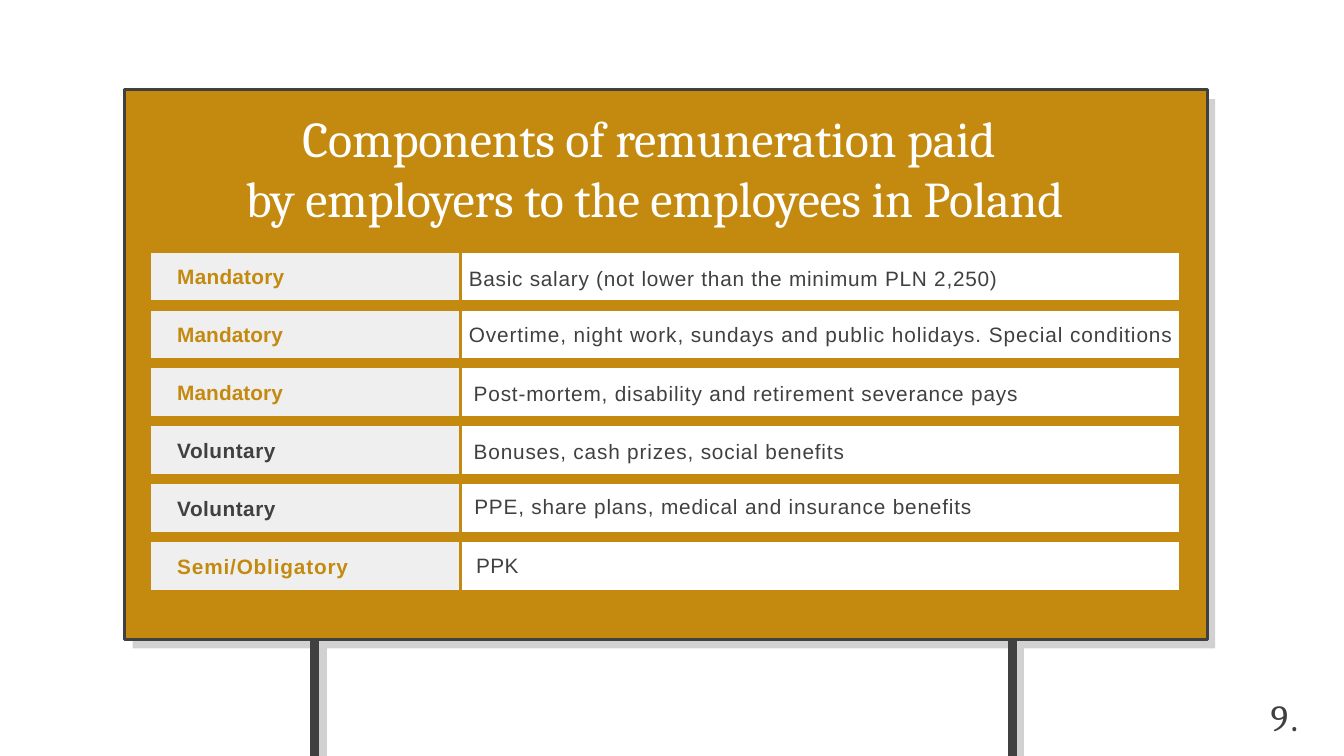
from pptx import Presentation
from pptx.dml.color import RGBColor
from pptx.enum.shapes import MSO_SHAPE
from pptx.enum.text import MSO_AUTO_SIZE, PP_ALIGN
from pptx.util import Inches, Pt

RECT = MSO_SHAPE.RECTANGLE
GROW = MSO_AUTO_SIZE.SHAPE_TO_FIT_TEXT
LEFT, CENTER = PP_ALIGN.LEFT, PP_ALIGN.CENTER
WIDE, HIGH = Inches(21.99), Inches(12.37)
GOLD, DARK, SHADE = "C48A10", "404041", "D1D1D1"
WHITE, PALE = "FFFFFF", "EFEFEF"

ROW_TOP, ROW_STEP, ROW_HIGH = 33.23, 7.66, 6.67
LABEL_X, LABEL_W = 11.1, 23.15
CELL_X, CELL_W = 34.06, 53.8
TEXT_HIGH = 3.56

ROWS = [
    ("Mandatory", GOLD, 0.3, "Basic salary (not lower than the minimum PLN 2,250)",
     0.9, 32.42, 1.78, 53.8),
    ("Mandatory", GOLD, 0.1, "Overtime, night work, sundays and public holidays. Special conditions",
     1.1, 32.42, 1.54, 55.57),
    ("Mandatory", GOLD, 0.1, "Post-mortem, disability and retirement severance pays",
     1, 32.79, 1.7, 53.8),
    ("Voluntary", DARK, 0.6, "Bonuses, cash prizes, social benefits",
     1, 32.79, 1.7, 53.8),
    ("Voluntary", DARK, 0.6, "PPE, share plans, medical and insurance benefits",
     1, 32.83, 1.21, 53.8),
    ("Semi/Obligatory", GOLD, 1, "PPK",
     0.5, 32.97, 1.46, 53.8),
]


def color(code):
    return RGBColor.from_string(code)


def across(share):
    return round(WIDE * share / 100)


def down(share):
    return round(HIGH * share / 100)


def place(x, y, w, h):
    return across(x), down(y), across(w), down(h)


def outline(shape, code, width):
    shape.line.color.rgb = color(code)
    shape.line.width = Pt(width)


def add_box(slide, x, y, w, h, fill, edge=None, width=0):
    box = slide.shapes.add_shape(RECT, *place(x, y, w, h))
    box.shadow.inherit = False
    box.fill.solid()
    box.fill.fore_color.rgb = color(fill)
    if edge:
        outline(box, edge, width)
    else:
        box.line.fill.background()


def add_legs(slide, x, code):
    left, right = across(x), across(x + 51.9)
    top, foot = down(82.62), HIGH
    path = slide.shapes.build_freeform(left, foot)
    path.add_line_segments([(left, top), (right, top), (right, foot)], close=False)
    legs = path.convert_to_shape()
    legs.shadow.inherit = False
    legs.fill.background()
    outline(legs, code, 10.72)


def add_text(slide, x, y, w, h, indent, before=1.2, align=LEFT):
    frame = slide.shapes.add_textbox(*place(x, y, w, h)).text_frame
    frame.word_wrap = True
    frame.auto_size = GROW
    frame.margin_left = across(indent)
    frame.margin_right = frame.margin_bottom = 0
    frame.margin_top = Inches(0.02)
    para = frame.paragraphs[0]
    para.alignment = align
    para.space_before = Pt(before)
    return para


def add_run(para, text, size, face, code, gap, bold=False):
    run = para.add_run()
    run.text = text
    run.font.size = Pt(size)
    run.font.name = face
    run.font.bold = bold
    run.font.color.rgb = color(code)
    run._r.get_or_add_rPr().set("spc", str(round(gap * 100)))


def add_board(slide):
    add_legs(slide, 23.97, SHADE)
    add_box(slide, 9.87, 13.1, 80.54, 72.68, SHADE)
    add_legs(slide, 23.42, DARK)
    add_box(slide, 9.28, 11.88, 80.54, 72.68, GOLD, DARK, 3.3)


def add_title(slide):
    para = add_text(slide, 7.91, 14.07, 72.4, 16.17, 9.19, 1.4, CENTER)
    add_run(para, "Components of remuneration paid ", 59, "Cambria", WHITE, -0.3)
    para.add_line_break()
    add_run(para, "by employers to the employees in Poland", 59, "Cambria", WHITE, -0.3)


def add_row(slide, top, row):
    label, code, gap, detail, space, x, drop, w = row
    add_box(slide, CELL_X, top, CELL_W, ROW_HIGH, WHITE, GOLD, 3.5)
    add_box(slide, LABEL_X, top, LABEL_W, ROW_HIGH, PALE, GOLD, 3.5)
    para = add_text(slide, LABEL_X, top + 1.54, LABEL_W, TEXT_HIGH, 2.09)
    add_run(para, label, 24.5, "Arial", code, gap, True)
    para = add_text(slide, x, top + drop, w, TEXT_HIGH, 2.46)
    add_run(para, detail, 24.5, "Arial", DARK, space)


def add_page(slide):
    para = add_text(slide, 94.41, 92.08, 4.05, 5.66, 0.14, 0)
    para.line_spacing = Pt(48.4)
    add_run(para, "9", 43.5, "Cambria", DARK, 2.6)
    add_run(para, ".", 43.5, "Cambria", DARK, 1.3)


def main():
    deck = Presentation()
    deck.slide_width, deck.slide_height = WIDE, HIGH
    slide = deck.slides.add_slide(deck.slide_layouts[6])
    add_board(slide)
    add_title(slide)
    for index, row in enumerate(ROWS):
        add_row(slide, ROW_TOP + index * ROW_STEP, row)
    add_page(slide)
    deck.save("out.pptx")


if __name__ == "__main__":
    main()
